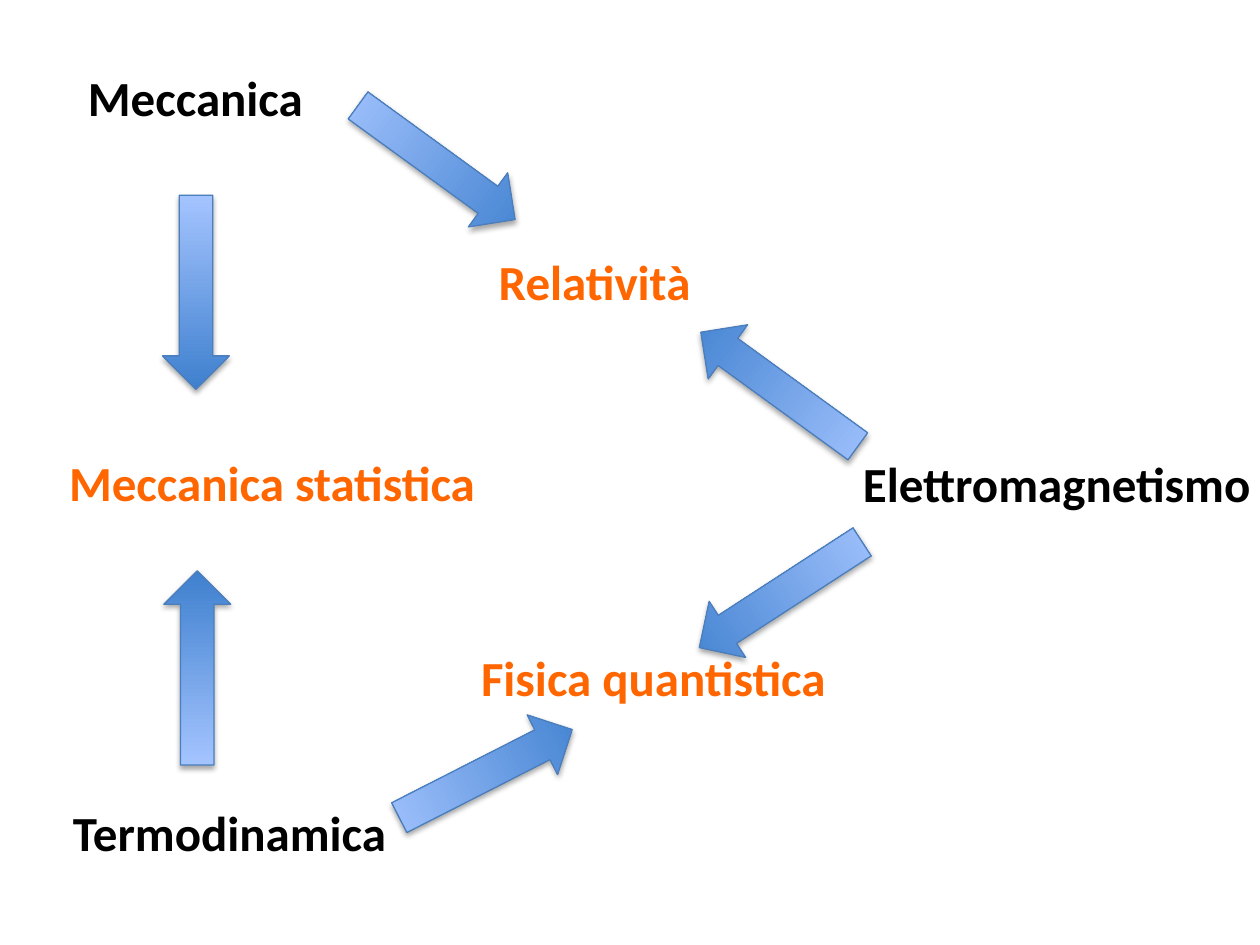
import pptx
import pptx.dml.color
import pptx.enum.shapes
import pptx.enum.text
import pptx.oxml
import pptx.oxml.ns
import pptx.util
from pptx.util import Pt

BLACK = pptx.dml.color.RGBColor(0x00, 0x00, 0x00)
ORANGE = pptx.dml.color.RGBColor(0xFF, 0x66, 0x00)
DARK_BLUE = pptx.dml.color.RGBColor(0x3F, 0x80, 0xCE)
LIGHT_BLUE = pptx.dml.color.RGBColor(0xA4, 0xC4, 0xFF)
LINE_BLUE = pptx.dml.color.RGBColor(0x4B, 0x7E, 0xBC)

THEORIES = [
    ("Meccanica", 43.2, 35.3, 139, BLACK),
    ("Termodinamica", 34.6, 455, 198, BLACK),
    ("Elettromagnetismo", 486, 255.6, 239, BLACK),
    ("Meccanica statistica", 32.4, 254.9, 250.6, ORANGE),
    ("Relatività", 277.9, 140.4, 126, ORANGE),
    ("Fisica quantistica", 267.8, 366.5, 214.6, ORANGE),
]
LABEL_HEIGHT = 41.2

ARROWS = [
    (92.9, 111.6, 0),
    (93.6, 326.2, 180),
    (230.4, 37.4, 306),
    (426.2, 167, 126),
    (258.5, 386.6, 243),
    (427, 284.4, 57),
]
ARROW_WIDTH, ARROW_HEIGHT = 38.2, 110.9

SHADOW_XML = (
    f'<a:outerShdw {pptx.oxml.ns.nsdecls("a")} blurRad="{Pt(3.15)}" dist="{Pt(1.81)}" '
    'dir="5400000" rotWithShape="0"><a:srgbClr val="000000">'
    '<a:alpha val="35000"/></a:srgbClr></a:outerShdw>'
)


def add_label(slide, text, left, top, width, color):
    box = slide.shapes.add_textbox(Pt(left), Pt(top), Pt(width), Pt(LABEL_HEIGHT))
    frame = box.text_frame
    frame.word_wrap = False
    frame.auto_size = pptx.enum.text.MSO_AUTO_SIZE.SHAPE_TO_FIT_TEXT
    run = frame.paragraphs[0].add_run()
    run.text = text
    run.font.name = "Calibri"
    run.font.size = Pt(28)
    run.font.bold = True
    run.font.color.rgb = color


def add_arrow(slide, left, top, rotation):
    arrow = slide.shapes.add_shape(
        pptx.enum.shapes.MSO_SHAPE.DOWN_ARROW,
        Pt(left), Pt(top), Pt(ARROW_WIDTH), Pt(ARROW_HEIGHT),
    )
    arrow.rotation = rotation
    arrow.fill.gradient()
    arrow.fill.gradient_angle = 90
    for stop, position, color in zip(
        arrow.fill.gradient_stops, (0, 1), (DARK_BLUE, LIGHT_BLUE)
    ):
        stop.position = position
        stop.color.rgb = color
    arrow.line.color.rgb = LINE_BLUE
    arrow.line.width = Pt(0.75)
    arrow.shadow.inherit = False
    effects = arrow._element.spPr.find(pptx.oxml.ns.qn("a:effectLst"))
    effects.append(pptx.oxml.parse_xml(SHADOW_XML))


def main():
    presentation = pptx.Presentation()
    presentation.slide_width = Pt(720)
    presentation.slide_height = Pt(540)
    slide = presentation.slides.add_slide(presentation.slide_layouts[6])
    for theory in THEORIES:
        add_label(slide, *theory)
    for arrow in ARROWS:
        add_arrow(slide, *arrow)
    presentation.save("out.pptx")


if __name__ == "__main__":
    main()
